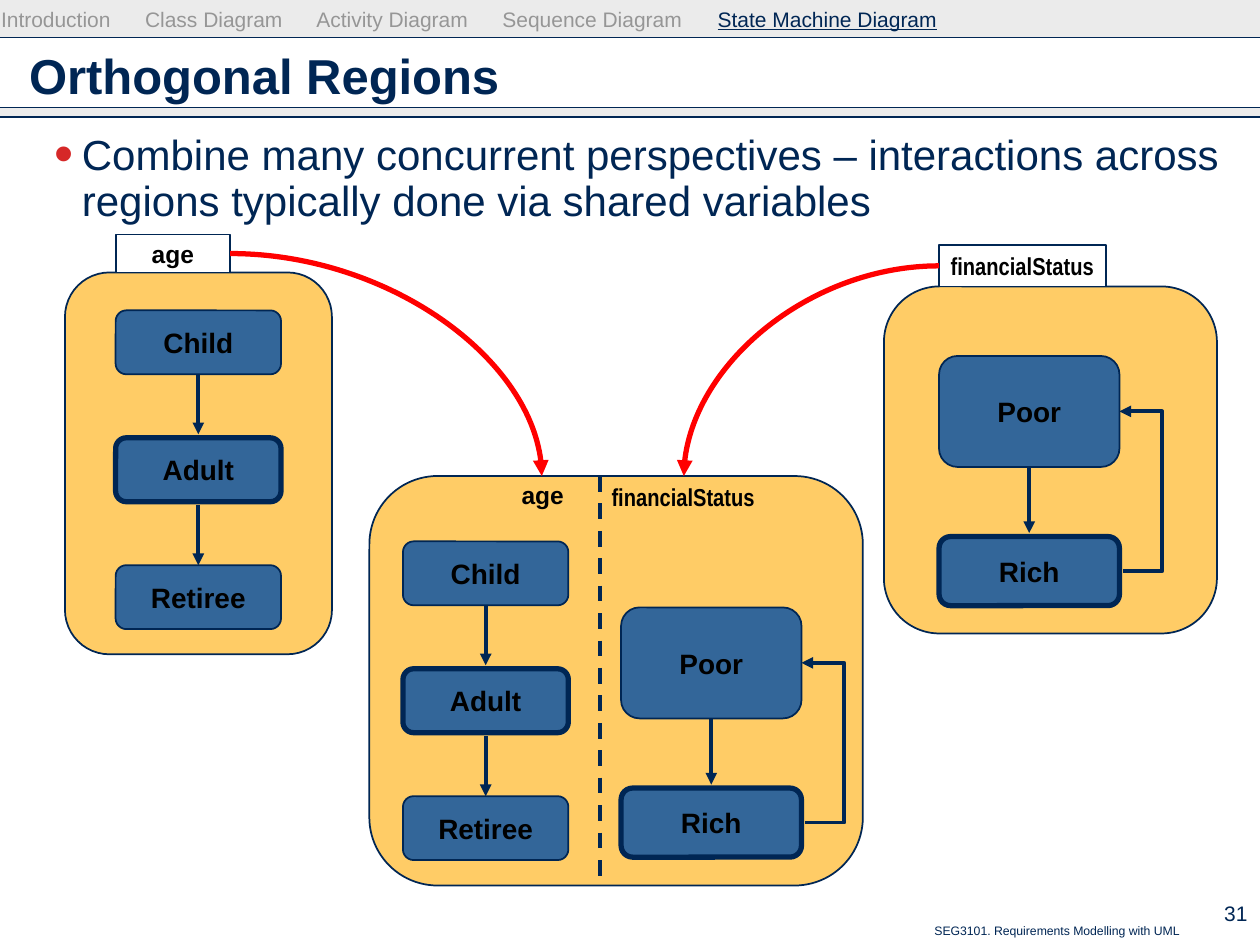
from lxml import etree
from pptx import Presentation
from pptx.dml.color import RGBColor
from pptx.enum.dml import MSO_LINE
from pptx.enum.shapes import MSO_CONNECTOR as CONNECTOR, MSO_SHAPE as SHAPE
from pptx.enum.text import MSO_ANCHOR as ANCHOR, MSO_AUTO_SIZE as AUTO_SIZE, PP_ALIGN as ALIGN
from pptx.oxml.ns import qn
from pptx.util import Pt

NAVY = RGBColor(0x00, 0x26, 0x54)
BLUE = RGBColor(0x33, 0x66, 0x99)
ORANGE = RGBColor(0xFF, 0xCC, 0x66)
RED = RGBColor(0xFF, 0x00, 0x00)
GREY = RGBColor(0x96, 0x96, 0x96)
LIGHT_GREY = RGBColor(0xCD, 0xCD, 0xCD)
WHITE = RGBColor(0xFF, 0xFF, 0xFF)
BLACK = RGBColor(0x00, 0x00, 0x00)

presentation = Presentation()
presentation.slide_width, presentation.slide_height = Pt(720), Pt(540)
slide = presentation.slides.add_slide(presentation.slide_layouts[1])
shapes = slide.shapes


def write_text(shape, text, size, color=BLACK, bold=False, align=ALIGN.CENTER,
               font="Arial", anchor=ANCHOR.MIDDLE, wrap=False):
    frame = shape.text_frame
    frame.text = text
    frame.word_wrap = wrap
    frame.auto_size = AUTO_SIZE.NONE
    frame.vertical_anchor = anchor
    paragraph = frame.paragraphs[0]
    paragraph.alignment = align
    for run in paragraph.runs:
        run.font.name, run.font.size, run.font.bold = font, Pt(size), bold
        run.font.color.rgb = color
    return paragraph


def add_line(begin, end, kind=CONNECTOR.STRAIGHT, color=NAVY, width=2.25, arrow=True):
    line = shapes.add_connector(kind, *(Pt(value) for value in (*begin, *end)))
    line.line.color.rgb = color
    line.line.width = Pt(width)
    if arrow:
        etree.SubElement(line.line._get_or_add_ln(), qn("a:tailEnd"), type="triangle")
    etree.SubElement(line._element.spPr, qn("a:effectLst"))
    return line


# Header bands and rules
for top, height in ((0, 21.6), (61.2, 5.4)):
    band = shapes.add_shape(SHAPE.RECTANGLE, 0, Pt(top), Pt(720), Pt(height))
    band.shadow.inherit = False
    band.line.fill.background()
    band.fill.solid()
    band.fill.fore_color.rgb = LIGHT_GREY
    color_element = band._element.spPr.find(".//" + qn("a:srgbClr"))
    etree.SubElement(color_element, qn("a:alpha"), val="40000")
for top in (21.6, 61.4, 66.8):
    add_line((0, top), (720, top), width=0.75, arrow=False)

# Title
title = shapes.title
title.left, title.top, title.width, title.height = Pt(9.4), Pt(19), Pt(701.3), Pt(47.5)
write_text(title, "Orthogonal Regions", 28, NAVY, True, ALIGN.LEFT, wrap=True)

# Bullet
body = slide.placeholders[1]
body.left, body.top, body.width, body.height = Pt(9.4), Pt(72.7), Pt(701.3), Pt(439.2)
bullet = write_text(
    body, "Combine many concurrent perspectives – interactions across regions "
    "typically done via shared variables", 24, NAVY, align=ALIGN.LEFT,
    anchor=ANCHOR.TOP, wrap=True)
bullet.line_spacing, bullet.space_before = Pt(26), Pt(0)
properties = bullet._p.get_or_add_pPr()
properties.set("marL", str(Pt(30.2)))
properties.set("indent", str(Pt(-15.8)))
bullet_color = etree.SubElement(properties, qn("a:buClr"))
etree.SubElement(bullet_color, qn("a:srgbClr"), val="D62828")
etree.SubElement(properties, qn("a:buSzPct"), val="130000")
etree.SubElement(properties, qn("a:buFont"), typeface="Arial")
etree.SubElement(properties, qn("a:buChar"), char="•")

# Regions
for left, top, width, height in ((37.1, 155.7, 152.6, 218.2),
                                 (505.1, 163.7, 190.3, 198.3),
                                 (211.1, 272, 282, 234)):
    region = shapes.add_shape(SHAPE.ROUNDED_RECTANGLE, Pt(left), Pt(top), Pt(width), Pt(height))
    region.shadow.inherit = False
    region.fill.solid()
    region.fill.fore_color.rgb = ORANGE
    region.line.color.rgb = NAVY
    region.line.width = Pt(1)

# States of each machine: name, offset from the machine's top, height, border width
AGE_STATES = (("Child", 0, 36.5, 1), ("Adult", 72.8, 36.5, 3), ("Retiree", 145.6, 36.5, 1))
STATUS_STATES = (("Poor", 0, 63.4, 1), ("Rich", 103.2, 39.5, 3))
GAP = 2     # space between an arrow and a thick border
LOOP = 24.3  # distance of the return arrow from the states
machines = ((66.1, 177.4, 94.5, AGE_STATES), (536.6, 203.4, 103.1, STATUS_STATES),
            (354.9, 347.1, 103.1, STATUS_STATES), (230.3, 309.4, 94.5, AGE_STATES))
for left, top, width, states in machines:
    boxes = []
    for name, offset, height, border in states:
        box = shapes.add_shape(SHAPE.ROUNDED_RECTANGLE, Pt(left), Pt(top + offset),
                               Pt(width), Pt(height))
        box.shadow.inherit = False
        box.fill.solid()
        box.fill.fore_color.rgb = BLUE
        box.line.color.rgb = NAVY
        box.line.width = Pt(border)
        write_text(box, name, 16, bold=True)
        boxes.append(box)

    # Transitions to the next state
    center, right = left + width / 2, left + width
    for index in range(len(states) - 1):
        (_, offset, height, border), (_, next_offset, _, next_border) = states[index:index + 2]
        begin_gap, end_gap = (GAP if value == 3 else 0 for value in (border, next_border))
        arrow = add_line((center, top + offset + height + begin_gap),
                         (center, top + next_offset - end_gap))
        if not begin_gap:
            arrow.begin_connect(boxes[index], 2)
        if not end_gap:
            arrow.end_connect(boxes[index + 1], 0)

    # Return from Rich to Poor
    if states is STATUS_STATES:
        poor_middle, rich_middle = (top + offset + height / 2 for _, offset, height, _ in states)
        loop = add_line((right + GAP, rich_middle), (right, poor_middle), CONNECTOR.ELBOW)
        guides = loop._element.spPr.find(".//" + qn("a:avLst"))
        bend = round(-(LOOP - GAP) / GAP * 100000)
        etree.SubElement(guides, qn("a:gd"), name="adj1", fmla=f"val {bend}")

# Variable names: boxed above the single regions, plain in the combined one
for name, font, width, height, boxed_at, plain_at in (
        ("age", "Arial", 65.4, 21.7, (66.1, 134), (277.4, 272)),
        ("financialStatus", "Arial Narrow", 95.3, 23.7, (536.6, 140), (342.8, 272))):
    size = Pt(width), Pt(height)
    tag = shapes.add_shape(SHAPE.RECTANGLE, *map(Pt, boxed_at), *size)
    tag.shadow.inherit = False
    tag.fill.solid()
    tag.fill.fore_color.rgb = WHITE
    tag.line.color.rgb = NAVY
    tag.line.width = Pt(1)
    label = shapes.add_textbox(*map(Pt, plain_at), *size)
    for shape in (tag, label):
        write_text(shape, name, 14, bold=True, font=font)

# Divider of the combined region
divider = add_line((342.8, 272), (342.8, 506), arrow=False)
divider.line.dash_style = MSO_LINE.DASH

# Curved arrows from the variables to the combined region
for begin, end in (((131.5, 144.9), (309.6, 272)), ((536.6, 151.9), (390.8, 272))):
    curve = add_line(begin, end, CONNECTOR.CURVE, RED, 3)
    curve._element.spPr.find(qn("a:prstGeom")).set("prst", "curvedConnector2")

# Navigation, one tab stop for each topic
navigation = shapes.add_textbox(Pt(-6.5), Pt(3.6), Pt(575.3), Pt(18))
navigation.text_frame.margin_top = 0
topics = write_text(
    navigation, "Introduction\tClass Diagram\tActivity Diagram\tSequence Diagram\t",
    12, GREY, align=ALIGN.LEFT, anchor=ANCHOR.TOP)
current = topics.add_run()
current.text = "State Machine Diagram"
current.font.name, current.font.size, current.font.underline = "Arial", Pt(12), True
current.font.color.rgb = NAVY
tab_list = etree.SubElement(topics._p.get_or_add_pPr(), qn("a:tabLst"))
for position in (82.3, 180.2, 286.5, 409.5):
    etree.SubElement(tab_list, qn("a:tab"), pos=str(Pt(position)), algn="l")

# Footer and page number
footer = shapes.add_textbox(Pt(234), Pt(524.2), Pt(447.1), Pt(15.8))
write_text(footer, "SEG3101. Requirements Modelling with UML", 7, NAVY,
           align=ALIGN.RIGHT, anchor=ANCHOR.TOP)
page_number = shapes.add_textbox(Pt(669.6), Pt(509.8), Pt(50.4), Pt(24.5))
write_text(page_number, "31", 12, NAVY, align=ALIGN.RIGHT)

presentation.save("out.pptx")
